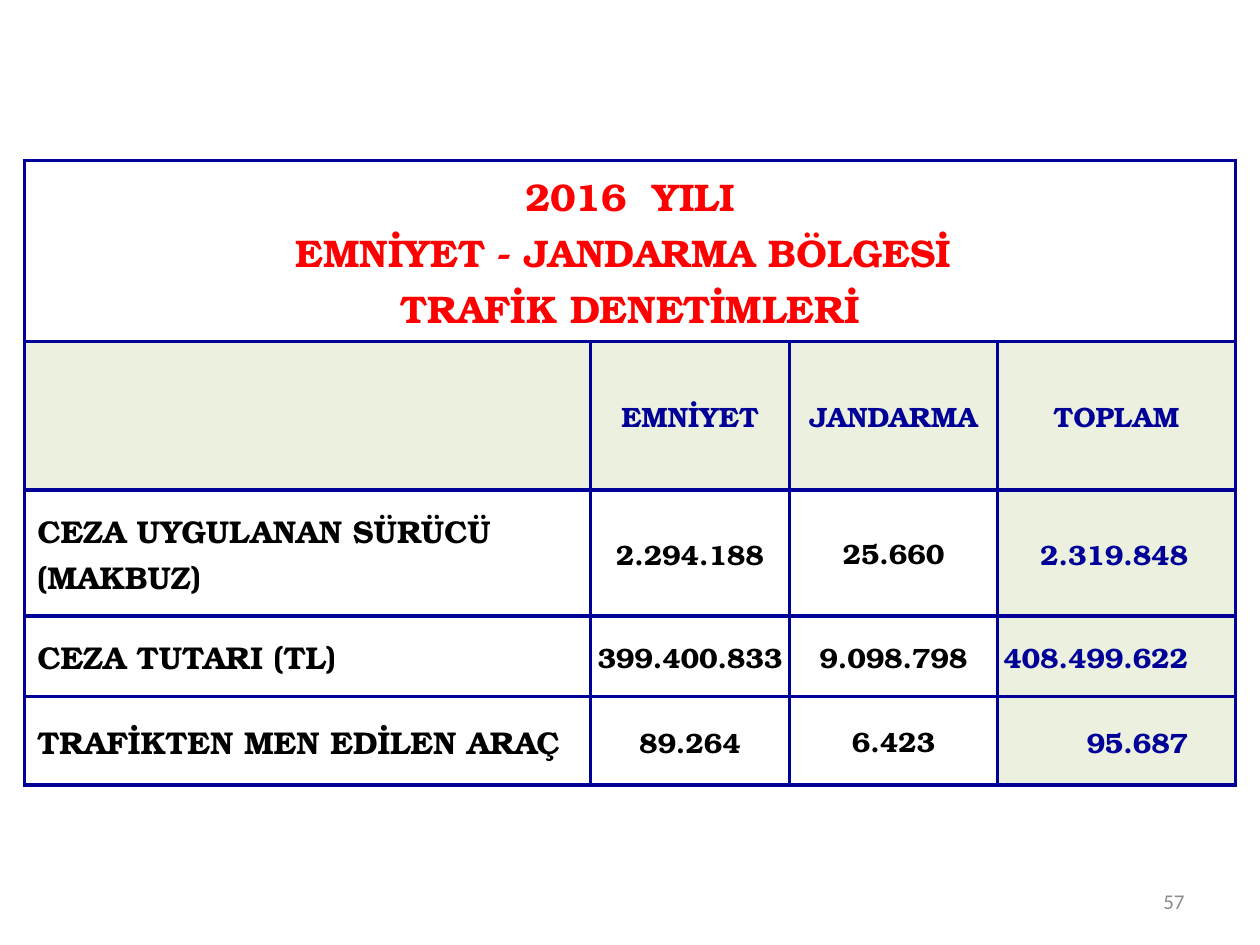
"""Build a slide with a table of 2016 traffic checks by police and gendarmerie."""
from lxml import etree
from pptx import Presentation
from pptx import util as u
from pptx.dml.color import RGBColor
from pptx.enum import text
from pptx.oxml.ns import qn

TITLE = ["2016  YILI", "EMNİYET - JANDARMA BÖLGESİ ", "TRAFİK DENETİMLERİ"]
HEADS = ["", "EMNİYET", "JANDARMA", "TOPLAM"]
ROWS = [
    ("CEZA UYGULANAN SÜRÜCÜ\n(MAKBUZ)", "2.294.188", "25.660", "2.319.848"),
    ("CEZA TUTARI (TL)", "399.400.833", "9.098.798", "408.499.622"),
    ("TRAFİKTEN MEN EDİLEN ARAÇ", "89.264", "6.423", "95.687"),
]
PAGE = "57"
HUES = {"red": "FF0000", "navy": "000099", "black": "000000",
        "green": "EBF1DE", "white": "FFFFFF", "grey": "8C8C8C"}
WIDTHS = [323.3, 113.8, 118.8, 136]
HEIGHTS = [103.2, 85, 72, 46.1, 50.4]
LEFT, TOP, EDGE, HANG = 14.1, 91.8, 2.25, 27
WIDE, FLAT, TIGHT = (7.2, 3.6, 7.2, 3.6), (0, 0, 0, 0), (0.7, 0.7, 0.7, 0)
ALIGN = text.PP_ALIGN
STYLES = {
    "title": dict(size=22, hue="red", align=ALIGN.CENTER, pad=WIDE, hang=HANG),
    "head": dict(size=16, hue="navy", align=ALIGN.CENTER, pad=WIDE,
                 hang=HANG, fill="green"),
    "label": dict(size=18, hue="black", align=ALIGN.LEFT, pad=WIDE, hang=HANG),
    "police": dict(size=16, hue="black", align=ALIGN.CENTER, pad=TIGHT,
                   fill="white"),
    "guard": dict(size=16, hue="black", align=ALIGN.CENTER, pad=FLAT,
                  fill="white"),
    "total": dict(size=16, hue="navy", align=ALIGN.RIGHT,
                  pad=(0.7, 0.7, 27, 0), fill="green"),
}
KINDS = ["label", "police", "guard", "total"]


def put(obj, **vals):
    for key, val in vals.items():
        setattr(obj, key, val)


def write(frame, lines, size, hue, align, face, bold):
    for num, line in enumerate(lines):
        para = frame.add_paragraph() if num else frame.paragraphs[0]
        para.alignment = align
        run = para.add_run()
        run.text = line
        put(run.font, name=face, size=u.Pt(size), bold=bold)
        run.font.color.rgb = RGBColor.from_string(HUES[hue])


def border(cell):
    props = cell._tc.get_or_add_tcPr()
    for num, side in enumerate(("lnL", "lnR", "lnT", "lnB")):
        line = etree.Element(qn("a:" + side), w=str(u.Pt(EDGE)))
        fill = etree.SubElement(line, qn("a:solidFill"))
        etree.SubElement(fill, qn("a:srgbClr"), val=HUES["navy"])
        props.insert(num, line)


def dress(cell, words, size, hue, align, pad, hang=0, fill=None):
    sides = ("margin_left", "margin_top", "margin_right", "margin_bottom")
    put(cell, vertical_anchor=text.MSO_ANCHOR.MIDDLE,
        **{side: u.Pt(gap) for side, gap in zip(sides, pad)})
    if fill:
        cell.fill.solid()
        cell.fill.fore_color.rgb = RGBColor.from_string(HUES[fill])
    else:
        cell.fill.background()
    if words:
        write(cell.text_frame, words.split("\n"), size, hue, align,
              "TeX Gyre Bonum", True)
    if hang:
        for para in cell.text_frame.paragraphs:
            props = para._p.get_or_add_pPr()
            props.set("marL", str(u.Pt(hang)))
            props.set("indent", str(u.Pt(-hang)))
    border(cell)


def main():
    deck = Presentation()
    put(deck, slide_width=u.Pt(720), slide_height=u.Pt(540))
    slide = deck.slides.add_slide(deck.slide_layouts[6])

    box = slide.shapes.add_textbox(*map(u.Pt, (516, 500.5, 168, 28.8)))
    put(box.text_frame, word_wrap=True,
        vertical_anchor=text.MSO_ANCHOR.MIDDLE)
    write(box.text_frame, [PAGE], 12, "grey", ALIGN.RIGHT, "Calibri", False)

    area = map(u.Pt, (LEFT, TOP, sum(WIDTHS), sum(HEIGHTS)))
    table = slide.shapes.add_table(len(HEIGHTS), len(WIDTHS), *area).table
    put(table, first_row=False, horz_banding=False)
    for col, width in zip(table.columns, WIDTHS):
        col.width = u.Pt(width)
    for row, height in zip(table.rows, HEIGHTS):
        row.height = u.Pt(height)

    grid = [["\n".join(TITLE), "", "", ""], HEADS, *ROWS]
    kinds = [["title"] * 4, ["head"] * 4] + [KINDS] * len(ROWS)
    table.cell(0, 0).merge(table.cell(0, 3))
    for r, (line, names) in enumerate(zip(grid, kinds)):
        for c, (words, name) in enumerate(zip(line, names)):
            dress(table.cell(r, c), words, **STYLES[name])
    deck.save("out.pptx")


if __name__ == "__main__":
    main()
